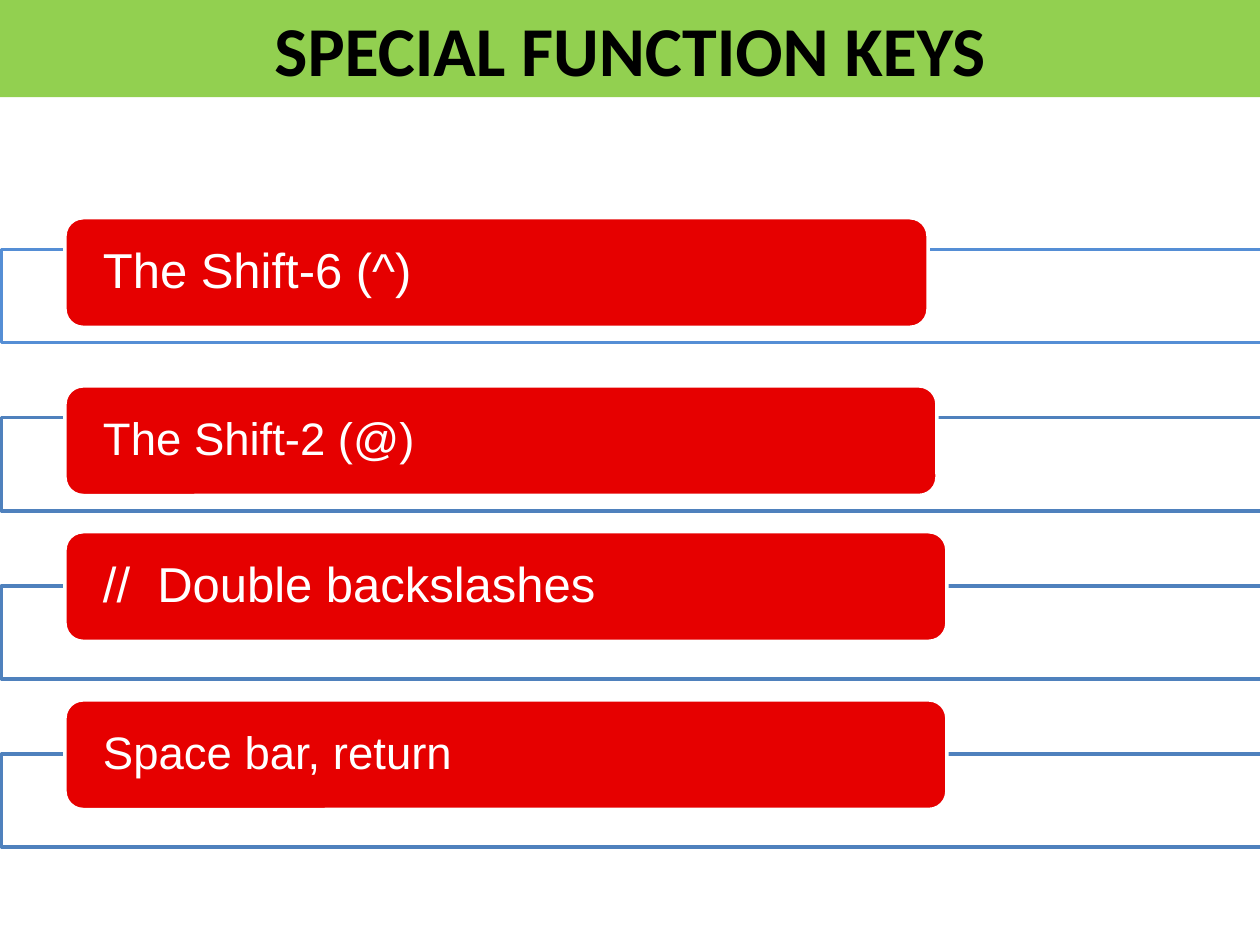
from lxml import etree
from pptx import Presentation
from pptx.dml.color import RGBColor
from pptx.enum import shapes, text
from pptx.oxml import ns
from pptx.util import Cm, Pt

GREEN = RGBColor(0x92, 0xD0, 0x50)
RED = RGBColor(0xE6, 0x00, 0x00)
LIGHT_BLUE = RGBColor(0x55, 0x8E, 0xD5)
BLUE = RGBColor(0x4F, 0x81, 0xBD)
WHITE = RGBColor(0xFF, 0xFF, 0xFF)
BLACK = RGBColor(0x00, 0x00, 0x00)

ROW_TOP, ROW_PITCH = 5.03, 3.39

# label, size, frame colour, bar width, bar rise above its frame
KEYS = [
    ("The Shift-6 (^)", 28, LIGHT_BLUE, 17.4, 0.64),
    ("The Shift-2 (@)", 26, BLUE, 17.58, 0.64),
    ("//  Double backslashes", 28, BLUE, 17.78, 1.09),
    ("Space bar, return", 26, BLUE, 17.78, 1.09),
]


def add_box(kind, left, top, width, height, fill, line):
    sp = s.shapes.add_shape(kind, Cm(left), Cm(top), Cm(width), Cm(height))
    sp.shadow.inherit = False
    sp.fill.solid()
    sp.fill.fore_color.rgb = fill
    sp.line.color.rgb = line
    sp.line.width = Pt(2)
    return sp


def add_run(p, label, font, size, color, bold=False):
    r = p.add_run()
    r.text = label
    r.font.name = font
    r.font.size = Pt(size)
    r.font.bold = bold
    r.font.color.rgb = color


prs = Presentation()
prs.slide_width, prs.slide_height = Cm(25.4), Cm(19.05)
s = prs.slides.add_slide(prs.slide_layouts[5])

title = s.shapes.title
title.left, title.top, title.width, title.height = Cm(0), Cm(0), Cm(25.4), Cm(1.96)
title.fill.solid()
title.fill.fore_color.rgb = GREEN
tf = title.text_frame
tf.vertical_anchor = text.MSO_ANCHOR.TOP
tf.auto_size = text.MSO_AUTO_SIZE.NONE
p = tf.paragraphs[0]
p.alignment = text.PP_ALIGN.CENTER
add_run(p, "SPECIAL FUNCTION KEYS", "Calibri", 40, BLACK, bold=True)

for i, (label, size, color, width, rise) in enumerate(KEYS):
    top = ROW_TOP + i * ROW_PITCH
    frame = add_box(shapes.MSO_SHAPE.RECTANGLE, 0.03, top, 25.4, 1.88, WHITE, color)
    rgb = frame.fill._xPr.find(ns.qn("a:solidFill")).find(ns.qn("a:srgbClr"))
    etree.SubElement(rgb, ns.qn("a:alpha")).set("val", "90000")

    bar = add_box(shapes.MSO_SHAPE.ROUNDED_RECTANGLE, 1.31, top - rise, width, 2.21, RED, WHITE)
    tf = bar.text_frame
    tf.word_wrap = True
    tf.vertical_anchor = text.MSO_ANCHOR.MIDDLE
    tf.margin_left = tf.margin_right = Cm(0.66)
    tf.margin_top = tf.margin_bottom = Cm(0)
    p = tf.paragraphs[0]
    p.alignment = text.PP_ALIGN.LEFT
    p.line_spacing = 0.9
    add_run(p, label, "Arial", size, WHITE)

prs.save("out.pptx")
